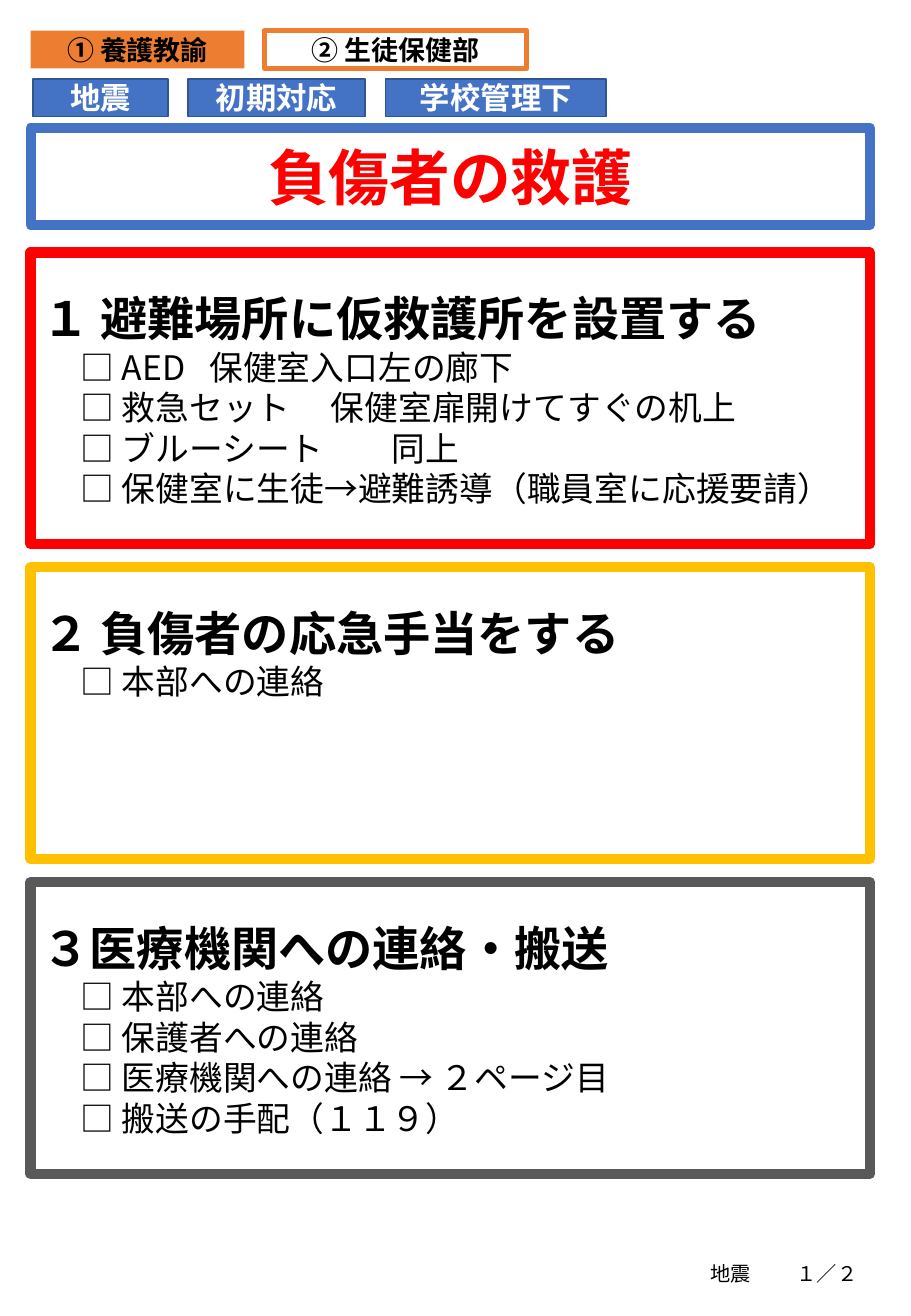
import dataclasses
import typing

import lxml.etree
import pptx
import pptx.dml.color
import pptx.enum.shapes
import pptx.enum.text
import pptx.oxml.ns
import pptx.util

Cm = pptx.util.Cm
Pt = pptx.util.Pt
Align = pptx.enum.text.PP_ALIGN
Anchor = pptx.enum.text.MSO_ANCHOR


@dataclasses.dataclass(frozen=True)
class Theme:
    font: str = "Noto Sans CJK JP"
    footer_font: str = "Calibri"
    black: str = "000000"
    white: str = "FFFFFF"
    red: str = "FF0000"
    orange: str = "ED7D31"
    blue: str = "4472C4"
    dark_blue: str = "325491"
    yellow: str = "FFC000"
    grey: str = "595959"
    title_size: float = 36
    heading_size: float = 28
    item_size: float = 20
    tag_size: float = 18
    role_size: float = 16
    footer_size: float = 12
    heading_leading: float = 52
    item_leading: float = 24
    frame_width: float = 6


THEME = Theme()
LEFT, FULL_WIDTH = 0.64, 17.55
TAG_HEIGHT, TAG_GAP = 0.79, 0.42
SECTION_TOP, SECTION_HEIGHT, SECTION_PITCH = 5.28, 6.1, 6.58
ITEM_INDENT, PLACE_TAB = 0.79, 6.86


class Box(typing.NamedTuple):
    left: float
    top: float
    width: float
    height: float


@dataclasses.dataclass(frozen=True)
class Tag:
    label: str
    width: float
    fill: str
    line: str | None = None
    line_width: float = 1


@dataclasses.dataclass(frozen=True)
class TagRow:
    left: float
    top: float
    size: float
    color: str
    tags: list[Tag]


@dataclasses.dataclass(frozen=True)
class Item:
    label: str
    place: str = ""


@dataclasses.dataclass(frozen=True)
class Section:
    heading: str
    color: str
    items: list[Item]


class FooterPart(typing.NamedTuple):
    label: str
    left: float
    align: Align


TAG_ROWS = [
    TagRow(LEFT, 0.64, THEME.role_size, THEME.black, [
        Tag("① 養護教諭", 4.47, THEME.orange),
        Tag("② 生徒保健部", 5.49, THEME.white, THEME.orange, 3),
    ]),
    TagRow(0.69, 1.65, THEME.tag_size, THEME.white, [
        Tag(label, width, THEME.blue, THEME.dark_blue)
        for label, width in (("地震", 2.82), ("初期対応", 3.71), ("学校管理下", 4.62))
    ]),
]
SECTIONS = [
    Section("１ 避難場所に仮救護所を設置する", THEME.red, [
        Item("□ AED ", " 保健室入口左の廊下"),
        Item("□ 救急セット ", " 保健室扉開けてすぐの机上"),
        Item("□ ブルーシート", " 同上"),
        Item("□ 保健室に生徒→避難誘導（職員室に応援要請）"),
    ]),
    Section("２ 負傷者の応急手当をする", THEME.yellow, [Item("□ 本部への連絡")]),
    Section("３医療機関への連絡・搬送", THEME.grey, [
        Item("□ 本部への連絡"),
        Item("□ 保護者への連絡"),
        Item("□ 医療機関への連絡 → ２ページ目"),
        Item("□ 搬送の手配（１１９）"),
    ]),
]
FOOTER = [FooterPart("１／２", 16.38, Align.RIGHT), FooterPart("地震", 14.6, Align.LEFT)]


def rgb(color: str) -> pptx.dml.color.RGBColor:
    return pptx.dml.color.RGBColor.from_string(color)


def add_run(paragraph, text: str, size: float, color: str, bold: bool = False,
            font: str = THEME.font) -> None:
    run = paragraph.add_run()
    run.text = text
    run.font.size = Pt(size)
    run.font.bold = bold
    run.font.color.rgb = rgb(color)
    run.font.name = font
    east_asian = lxml.etree.SubElement(run.font._element, pptx.oxml.ns.qn("a:ea"))
    east_asian.set("typeface", THEME.font)


def paint(shape, fill: str, line: str | None, line_width: float) -> None:
    shape.fill.solid()
    shape.fill.fore_color.rgb = rgb(fill)
    if line is None:
        shape.line.fill.background()
    else:
        shape.line.color.rgb = rgb(line)
        shape.line.width = Pt(line_width)


def add_box(slide, box: Box, fill: str, line: str | None, line_width: float,
            anchor: Anchor):
    shape = slide.shapes.add_shape(pptx.enum.shapes.MSO_SHAPE.RECTANGLE, *map(Cm, box))
    shape.shadow.inherit = False
    paint(shape, fill, line, line_width)
    shape.text_frame.word_wrap = True
    shape.text_frame.vertical_anchor = anchor
    return shape.text_frame


def draw_tag_row(slide, row: TagRow) -> None:
    left = row.left
    for tag in row.tags:
        frame = add_box(slide, Box(left, row.top, tag.width, TAG_HEIGHT),
                        tag.fill, tag.line, tag.line_width, Anchor.MIDDLE)
        frame.paragraphs[0].alignment = Align.CENTER
        add_run(frame.paragraphs[0], tag.label, row.size, row.color, True)
        left += tag.width + TAG_GAP


def draw_title(slide, text: str) -> None:
    title = slide.shapes.title
    title.left, title.top, title.width, title.height = map(
        Cm, Box(LEFT, 2.67, FULL_WIDTH, 2.03))
    paint(title, THEME.white, THEME.blue, THEME.frame_width)
    frame = title.text_frame
    frame.auto_size = pptx.enum.text.MSO_AUTO_SIZE.NONE
    frame.vertical_anchor = Anchor.MIDDLE
    frame.paragraphs[0].alignment = Align.CENTER
    add_run(frame.paragraphs[0], text, THEME.title_size, THEME.red, True)


def draw_item(frame, item: Item) -> None:
    paragraph = frame.add_paragraph()
    paragraph.alignment = Align.LEFT
    paragraph.line_spacing = Pt(THEME.item_leading)
    properties = paragraph._p.get_or_add_pPr()
    properties.set("marL", str(Cm(ITEM_INDENT)))
    properties.set("indent", "0")
    add_run(paragraph, item.label, THEME.item_size, THEME.black)
    if item.place:
        stops = lxml.etree.SubElement(properties, pptx.oxml.ns.qn("a:tabLst"))
        stop = lxml.etree.SubElement(stops, pptx.oxml.ns.qn("a:tab"))
        stop.set("pos", str(Cm(PLACE_TAB)))
        stop.set("algn", "l")
        add_run(paragraph, "\t" + item.place, THEME.item_size, THEME.black)


def draw_section(slide, section: Section, top: float) -> None:
    frame = add_box(slide, Box(LEFT, top, FULL_WIDTH, SECTION_HEIGHT),
                    THEME.white, section.color, THEME.frame_width, Anchor.TOP)
    heading = frame.paragraphs[0]
    heading.alignment = Align.LEFT
    heading.line_spacing = Pt(THEME.heading_leading)
    add_run(heading, section.heading, THEME.heading_size, THEME.black, True)
    for item in section.items:
        draw_item(frame, item)


def draw_footer_part(slide, part: FooterPart) -> None:
    frame = slide.shapes.add_textbox(
        *map(Cm, Box(part.left, 26.24, 1.8, TAG_HEIGHT))).text_frame
    frame.word_wrap = True
    frame.paragraphs[0].alignment = part.align
    add_run(frame.paragraphs[0], part.label, THEME.footer_size, THEME.black,
            font=THEME.footer_font)


def main() -> None:
    deck = pptx.Presentation()
    deck.slide_width, deck.slide_height = Cm(19.05), Cm(27.51)
    slide = deck.slides.add_slide(deck.slide_layouts.get_by_name("Title Only"))
    draw_title(slide, "負傷者の救護")
    for row in TAG_ROWS:
        draw_tag_row(slide, row)
    for index, section in enumerate(SECTIONS):
        draw_section(slide, section, SECTION_TOP + index * SECTION_PITCH)
    for part in FOOTER:
        draw_footer_part(slide, part)
    deck.save("out.pptx")


if __name__ == "__main__":
    main()
